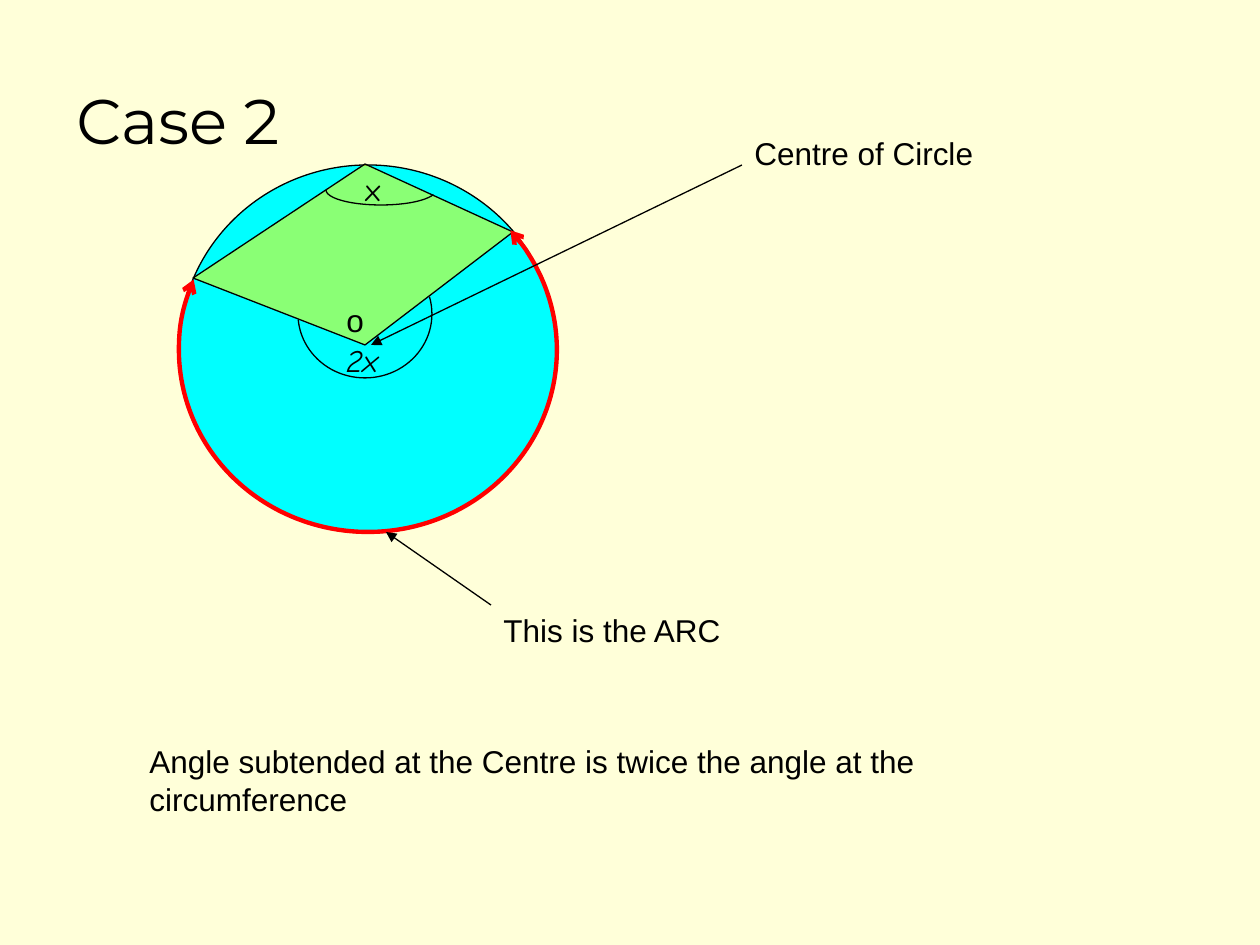
import lxml.etree
import pptx
import pptx.dml.color
import pptx.enum.shapes
import pptx.enum.text
import pptx.oxml.ns
import pptx.util

RGBColor = pptx.dml.color.RGBColor
CREAM = RGBColor(0xFF, 0xFF, 0xD9)
CYAN = RGBColor(0x00, 0xFF, 0xFF)
YELLOW = RGBColor(0xFF, 0xFF, 0x00)
RED = RGBColor(0xFF, 0x00, 0x00)
BLACK = RGBColor(0x00, 0x00, 0x00)

EMU_PER_PX = 914400 / 126
ARC_UNITS_PER_DEGREE = 0.6
BODY_FONT, ANGLE_FONT, TITLE_FONT = "Arial", "Comic Neue", "Montserrat"


def emu(*lengths):
    return [round(v * EMU_PER_PX) for v in lengths]


def sub(parent, tag, **attrs):
    return lxml.etree.SubElement(parent, pptx.oxml.ns.qn(tag), attrs)


class Diagram:
    """Holds the slide and the house style of the geometry drawing."""

    def __init__(self, slide):
        self.s = slide
        self.s.background.fill.solid()
        self.s.background.fill.fore_color.rgb = CREAM

    def style(self, sp, fill=None, color=BLACK, width=0.75):
        sp.shadow.inherit = False
        if fill is None:
            sp.fill.background()
        else:
            sp.fill.solid()
            sp.fill.fore_color.rgb = fill
        sp.line.color.rgb = color
        sp.line.width = pptx.util.Pt(width)
        return sp

    def font(self, p, name, size, italic=None):
        for r in p.runs:
            r.font.name, r.font.size = name, pptx.util.Pt(size)
            r.font.italic = italic
            r.font.color.rgb = BLACK

    def title(self, text, x, y, w, h):
        sp = self.s.shapes.title
        sp.left, sp.top, sp.width, sp.height = emu(x, y, w, h)
        tf = sp.text_frame
        tf.text = text
        tf.word_wrap = False
        tf.auto_size = pptx.enum.text.MSO_AUTO_SIZE.NONE
        tf.vertical_anchor = pptx.enum.text.MSO_ANCHOR.MIDDLE
        tf.paragraphs[0].alignment = pptx.enum.text.PP_ALIGN.CENTER
        self.font(tf.paragraphs[0], TITLE_FONT, 36)

    def label(self, text, x, y, w, h=50, name=BODY_FONT, italic=None):
        tf = self.s.shapes.add_textbox(*emu(x, y, w, h)).text_frame
        tf.text = text
        tf.word_wrap = True
        tf.auto_size = pptx.enum.text.MSO_AUTO_SIZE.SHAPE_TO_FIT_TEXT
        self.font(tf.paragraphs[0], name, 18, italic)

    def ellipse(self, x, y, w, h, fill):
        kind = pptx.enum.shapes.MSO_SHAPE.OVAL
        self.style(self.s.shapes.add_shape(kind, *emu(x, y, w, h)), fill)

    def polygon(self, points, fill, opacity):
        builder = self.s.shapes.build_freeform(*emu(*points[0]), scale=1.0)
        builder.add_line_segments([emu(*pt) for pt in points[1:]], close=True)
        sp = self.style(builder.convert_to_shape(), fill)
        clr = sp.fill._xPr.find(".//" + pptx.oxml.ns.qn("a:srgbClr"))
        sub(clr, "a:alpha", val=str(opacity * 1000))

    def arc(self, cx, cy, rx, ry, start, end, color=BLACK, width=0.75):
        """Elliptical arc; degrees run clockwise from the right."""
        kind = pptx.enum.shapes.MSO_SHAPE.ARC
        box = emu(cx - rx, cy - ry, 2 * rx, 2 * ry)
        sp = self.s.shapes.add_shape(kind, *box)
        for i, angle in enumerate((start, end)):
            sp.adjustments[i] = angle * ARC_UNITS_PER_DEGREE
        return self.style(sp, None, color, width)

    def arrowheads(self, sp, kind, *ends):
        ln = sp.line._get_or_add_ln()
        for end in ends:
            sub(ln, f"a:{end}", type=kind)

    def pointer(self, x1, y1, x2, y2):
        kind = pptx.enum.shapes.MSO_CONNECTOR.STRAIGHT
        sp = self.s.shapes.add_connector(kind, *emu(x1, y1, x2, y2))
        sp.line.color.rgb = BLACK
        sp.line.width = pptx.util.Pt(0.75)
        self.arrowheads(sp, "triangle", "tailEnd")
        sub(sp._element.spPr, "a:effectLst")


def main():
    prs = pptx.Presentation()
    prs.slide_width, prs.slide_height = emu(1260, 945)
    d = Diagram(prs.slides.add_slide(prs.slide_layouts[5]))
    d.title("Case 2", 62, 75, 232, 89)

    # Circle and the quadrilateral through its centre
    d.ellipse(179, 165, 378, 368, CYAN)
    d.polygon([(193, 278), (365, 345), (513, 232), (365, 164)], YELLOW, 54)

    # Angles at the centre and at the circumference
    d.arc(365, 314, 67, 64, 345, 175)
    d.arc(381, 190, 55, 15, 5, 180)
    d.label("2x", 334, 335, 98, name=ANGLE_FONT, italic=True)
    d.label("x", 353, 164, 52, name=ANGLE_FONT)

    # Highlighted arc
    arc = d.arc(368, 350, 189, 182, 320, 202, RED, 2.5)
    d.arrowheads(arc, "arrow", "headEnd", "tailEnd")
    d.label("o", 334, 295, 52)

    # Callouts
    d.label("This is the ARC", 491, 605, 320)
    d.pointer(491, 605, 386, 532)
    d.pointer(742, 165, 371, 345)
    d.label("Centre of Circle", 742, 128, 367)

    # Theorem
    d.label("Angle subtended at the Centre is twice the angle at the circumference",
            137, 736, 837, 88)
    prs.save("out.pptx")


if __name__ == "__main__":
    main()
